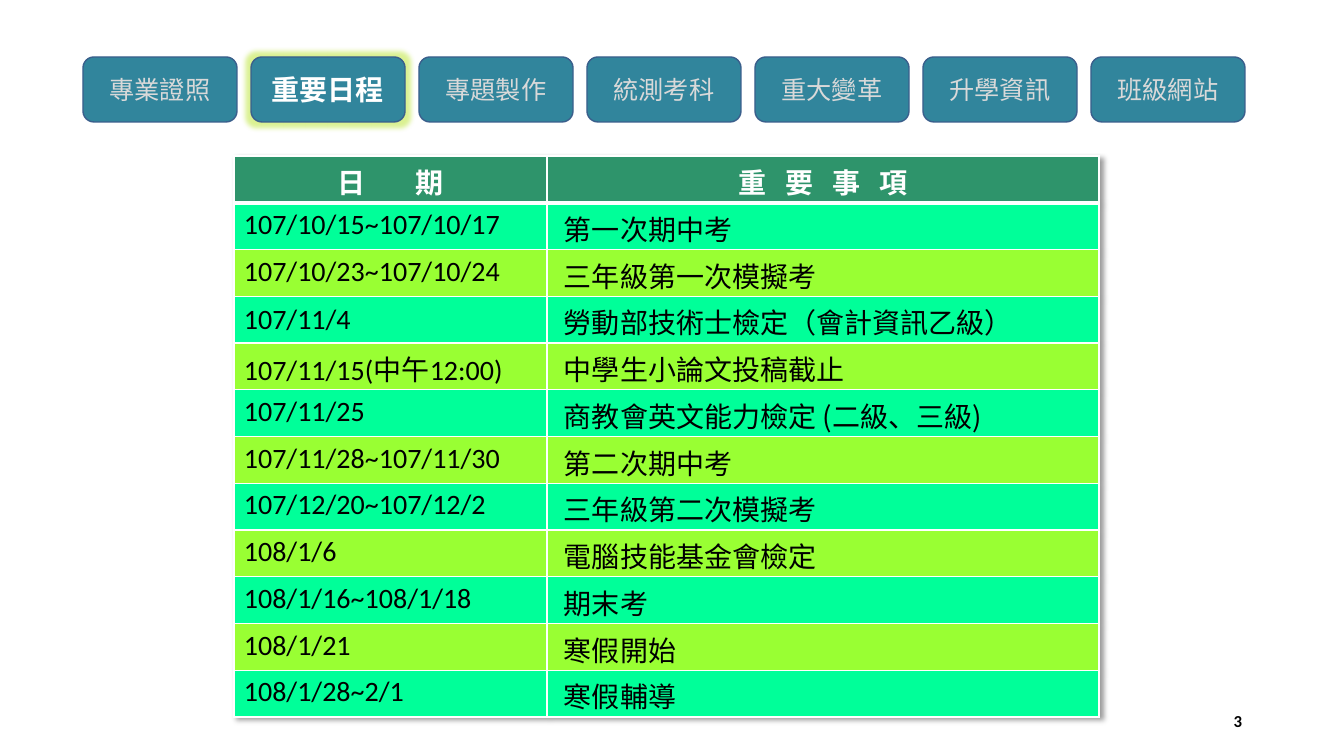
from lxml import etree
from pptx import Presentation
from pptx.dml.color import RGBColor as RGB
from pptx.enum.shapes import MSO_SHAPE as SHAPE
from pptx.enum.text import MSO_ANCHOR as ANCHOR, PP_ALIGN as ALIGN
from pptx.oxml import parse_xml
from pptx.oxml.ns import qn
from pptx.util import Emu, Pt

WHITE = RGB(0xFF, 0xFF, 0xFF)
BLACK = RGB(0, 0, 0)
GRAY = RGB(0xD9, 0xD9, 0xD9)
TEAL = RGB(0x31, 0x85, 0x9C)
NAVY = RGB(0x3A, 0x5F, 0x8C)
PINE = RGB(0x2E, 0x94, 0x6B)
MINT = RGB(0x00, 0xFF, 0x99)
LIME = RGB(0x99, 0xFF, 0x33)
GLOW = RGB(0xC3, 0xE8, 0x4A)

LATIN = "Calibri"
HAN = "Noto Sans CJK SC"
NS = 'xmlns:a="http://schemas.openxmlformats.org/drawingml/2006/main"'

TABS = ["專業證照", "重要日程", "專題製作", "統測考科", "重大變革", "升學資訊", "班級網站"]
ACTIVE = "重要日程"

# Each heading: spaced part, last letter, letter spacing in 1/100 pt
HEADS = [("日 ", "期", 1570), ("重 要 事 ", "項", 440)]

# Each date is a list of (text, font) runs
DATES = [
    ([("107/10/15~107/10/17", LATIN)], "第一次期中考"),
    ([("107/10/23~107/10/24", LATIN)], "三年級第一次模擬考"),
    ([("107/11/4", LATIN)], "勞動部技術士檢定（會計資訊乙級）"),
    ([("107/11/15(", LATIN), ("中午", HAN), ("12:00)", LATIN)], "中學生小論文投稿截止"),
    ([("107/11/25", LATIN)], "商教會英文能力檢定 (二級、三級)"),
    ([("107/11/28~107/11/30", LATIN)], "第二次期中考"),
    ([("107/12/20~107/12/2", LATIN)], "三年級第二次模擬考"),
    ([("108/1/6", LATIN)], "電腦技能基金會檢定"),
    ([("108/1/16~108/1/18", LATIN)], "期末考"),
    ([("108/1/21", LATIN)], "寒假開始"),
    ([("108/1/28~2/1", LATIN)], "寒假輔導"),
]


def px(n):
    return Emu(round(n * 914400 / 100.8))


def add_run(para, text, font, size, color, bold=False, gap=0):
    run = para.add_run()
    run.text = text
    run.font.name = font
    run.font.size = Pt(size)
    run.font.bold = bold
    run.font.color.rgb = color
    props = run.font._element
    etree.SubElement(props, qn("a:ea")).set("typeface", font)
    if gap:
        props.set("spc", str(gap))


def add_tab(slide, left, label):
    tab = slide.shapes.add_shape(
        SHAPE.FLOWCHART_ALTERNATE_PROCESS, px(left), px(57), px(154), px(65))
    tab.shadow.inherit = False
    tab.fill.solid()
    tab.fill.fore_color.rgb = TEAL
    tab.line.color.rgb = NAVY
    tab.line.width = Pt(1)
    frame = tab.text_frame
    frame.vertical_anchor = ANCHOR.MIDDLE
    para = frame.paragraphs[0]
    para.alignment = ALIGN.CENTER
    if label == ACTIVE:
        add_run(para, label, HAN, 20, WHITE, bold=True)
        effects = tab._element.spPr.find(qn("a:effectLst"))
        effects.append(parse_xml(
            f'<a:glow {NS} rad="{px(10)}"><a:srgbClr val="{GLOW}">'
            '<a:alpha val="60000"/></a:srgbClr></a:glow>'))
    else:
        add_run(para, label, LATIN, 18, GRAY)


def set_cell(cell, fill, left=10, foot=1):
    props = cell._tc.get_or_add_tcPr()
    for side, width in zip("LRTB", (1, 1, 1, foot)):
        props.append(parse_xml(
            f'<a:ln{side} {NS} w="{Pt(width)}"><a:solidFill>'
            f'<a:srgbClr val="{WHITE}"/></a:solidFill></a:ln{side}>'))
    cell.fill.solid()
    cell.fill.fore_color.rgb = fill
    cell.margin_left = px(left)
    cell.margin_right = px(10)
    cell.margin_top = px(5)
    cell.margin_bottom = 0
    return cell.text_frame.paragraphs[0]


def add_dates(slide):
    frame = slide.shapes.add_table(
        len(DATES) + 1, 2, px(234), px(156), px(865), px(561))
    table = frame.table
    table.horz_banding = False
    for col, width in zip(table.columns, (313, 552)):
        col.width = px(width)
    table._tbl.tblPr.insert(0, parse_xml(
        f'<a:effectLst {NS}><a:outerShdw blurRad="{px(5)}" dist="{px(4)}" '
        'dir="2700000" algn="tl" rotWithShape="0"><a:srgbClr val="000000">'
        '<a:alpha val="40000"/></a:srgbClr></a:outerShdw></a:effectLst>'))

    # Heading row
    for col, (start, last, gap) in enumerate(HEADS):
        para = set_cell(table.cell(0, col), PINE, foot=3)
        para.alignment = ALIGN.CENTER
        add_run(para, start, HAN, 20, WHITE, bold=True, gap=gap)
        add_run(para, last, HAN, 20, WHITE, bold=True)

    # Date rows in alternating colours
    for row, (date, event) in enumerate(DATES, 1):
        fill = MINT if row % 2 else LIME
        para = set_cell(table.cell(row, 0), fill)
        for text, font in date:
            add_run(para, text, font, 20, BLACK)
        para = set_cell(table.cell(row, 1), fill, left=17)
        add_run(para, event, HAN, 20, BLACK)

    # The third date sits in the middle of its cell
    mid = table.cell(3, 0)
    mid.vertical_anchor = ANCHOR.MIDDLE
    mid.margin_bottom = px(5)


def add_number(slide, text):
    box = slide.shapes.add_textbox(px(950), px(701), px(302), px(40))
    frame = box.text_frame
    frame.word_wrap = True
    frame.vertical_anchor = ANCHOR.MIDDLE
    para = frame.paragraphs[0]
    para.alignment = ALIGN.RIGHT
    add_run(para, text, LATIN, 12, BLACK, bold=True)


def main():
    deck = Presentation()
    deck.slide_width = px(1344)
    deck.slide_height = px(756)
    slide = deck.slides.add_slide(deck.slide_layouts[6])

    # Tab bar
    for i, label in enumerate(TABS):
        add_tab(slide, 83 + 168 * i, label)

    # Table and page number
    add_dates(slide)
    add_number(slide, "3")
    deck.save("out.pptx")


if __name__ == "__main__":
    main()
